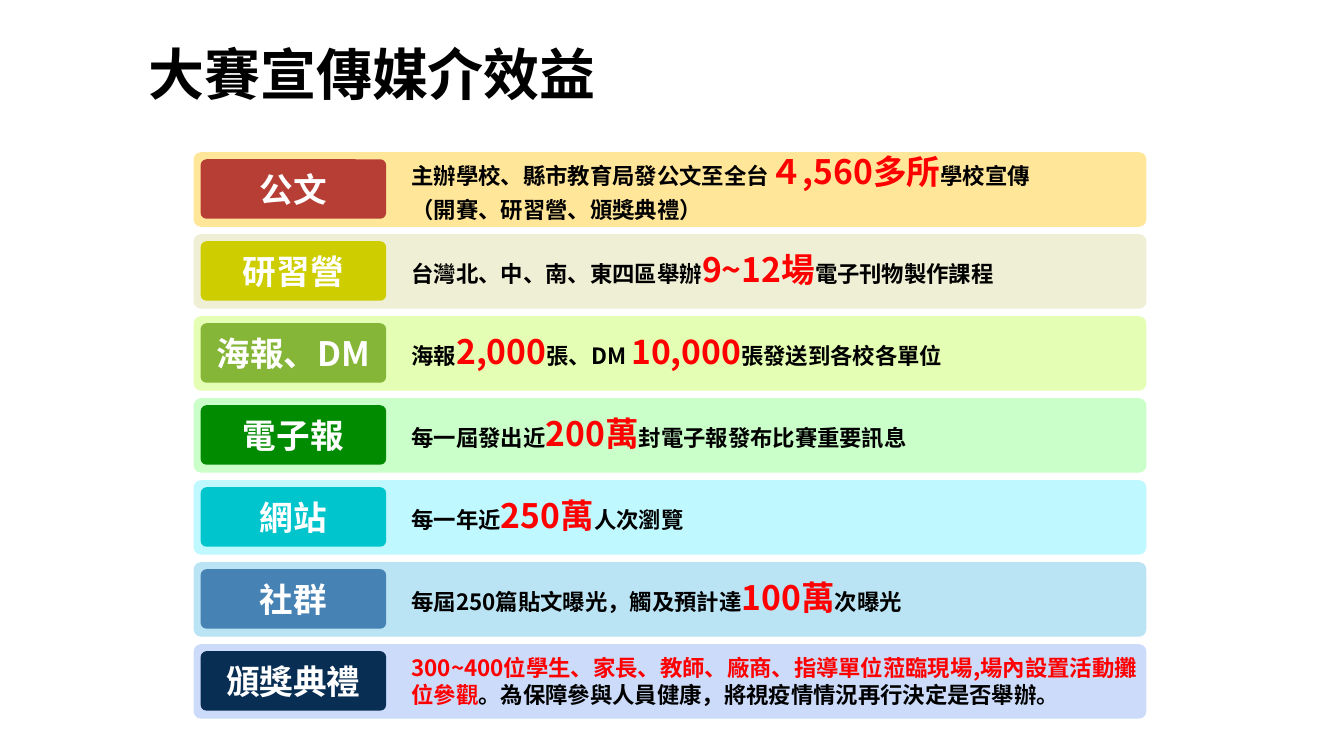
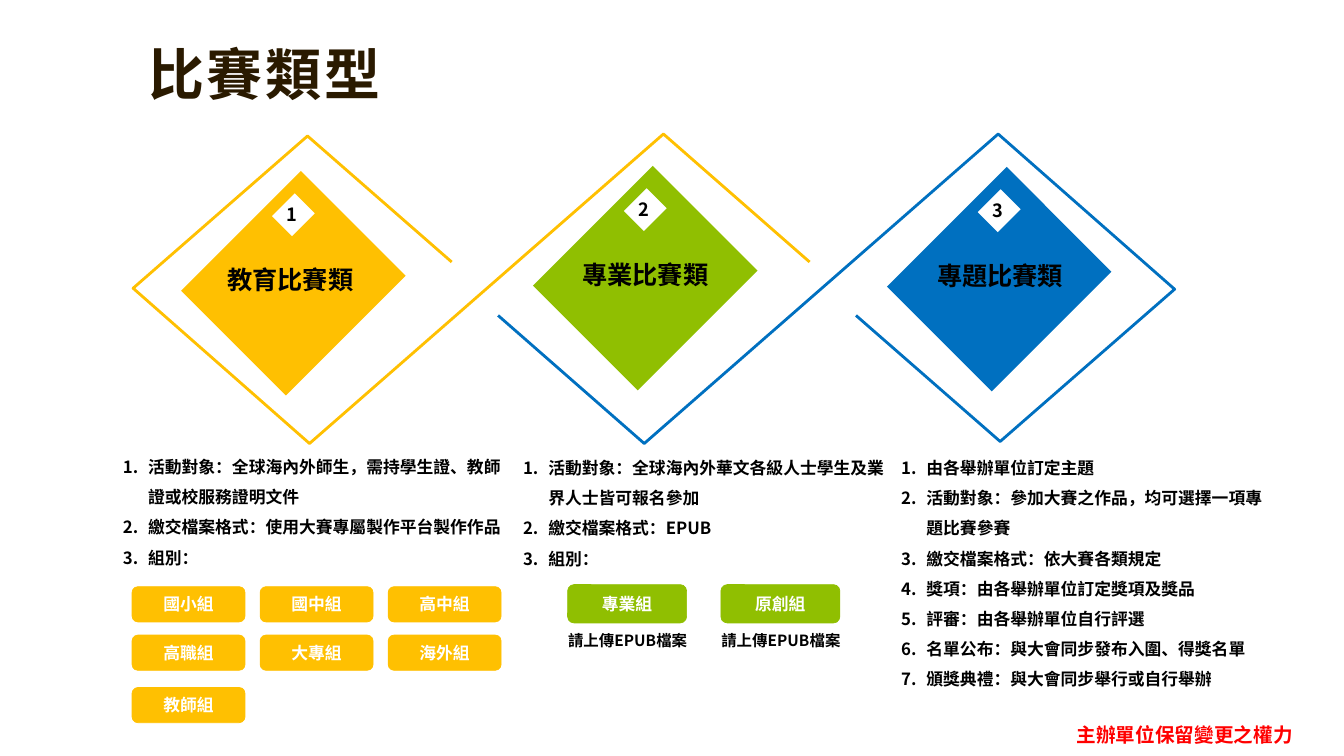
from lxml.etree import SubElement
from pptx import Presentation
from pptx.dml.color import RGBColor
from pptx.enum.shapes import MSO_SHAPE
from pptx.enum.text import MSO_ANCHOR, PP_ALIGN
from pptx.oxml.ns import qn
from pptx.util import Inches, Pt

FONT = "Noto Sans CJK SC"
BLACK, WHITE, RED = "000000", "FFFFFF", "FF0000"
GOLD, GREEN, BLUE = "FFC001", "90BF01", "0070C0"
MID, LEFT = PP_ALIGN.CENTER, PP_ALIGN.LEFT


def rgb(code):
    return RGBColor.from_string(code)


class Deck:
    """Holds the style and the current slide."""

    def __init__(self):
        self.prs = Presentation()
        self.prs.slide_width = Inches(13.33)
        self.prs.slide_height = Inches(7.5)
        self.slide = None

    def start(self, text, color=BLACK, track=0):
        """Add a slide with its title."""
        self.slide = self.prs.slides.add_slide(self.prs.slide_layouts[5])
        title = self.slide.shapes.title
        title.left, title.top = Inches(1.37), Inches(0.42)
        title.width, title.height = Inches(11.13), Inches(1.63)
        frame = title.text_frame
        frame.text = text
        frame.vertical_anchor = MSO_ANCHOR.TOP
        para = frame.paragraphs[0]
        para.alignment = LEFT
        para.line_spacing = 0.9
        self.style(para.runs[0], 40, color)
        if track:
            para.runs[0].font._element.set("spc", str(track * 100))

    def style(self, run, size, color, face=FONT):
        font = run.font
        font.name, font.size, font.bold = face, Pt(size), True
        font.color.rgb = rgb(color)
        east = SubElement(font._element, qn("a:ea"))
        east.set("typeface", FONT)

    def fill_in(self, para, text, size, color, align=MID, face=FONT):
        para.text = text
        para.alignment = align
        self.style(para.runs[0], size, color, face)

    def shape(self, kind, x, y, w, h, fill, edge=None, alpha=100):
        box = self.slide.shapes.add_shape(
            kind, Inches(x), Inches(y), Inches(w), Inches(h))
        box.shadow.inherit = False
        box.fill.solid()
        box.fill.fore_color.rgb = rgb(fill)
        if alpha < 100:
            tone = box._element.spPr.find(".//" + qn("a:srgbClr"))
            SubElement(tone, qn("a:alpha")).set("val", str(alpha * 1000))
        if edge:
            box.line.color.rgb = rgb(edge)
            box.line.width = Pt(0.5)
        else:
            box.line.fill.background()
        return box

    def tag(self, x, y, w, h, fill, text, size, edge=None, bend=None):
        """Rounded box with a centred white label."""
        box = self.shape(MSO_SHAPE.ROUNDED_RECTANGLE, x, y, w, h, fill, edge)
        if bend:
            box.adjustments[0] = bend
        box.text_frame.vertical_anchor = MSO_ANCHOR.MIDDLE
        self.fill_in(box.text_frame.paragraphs[0], text, size, WHITE)

    def band(self, y, fill, alpha, lines):
        """Wide row; each line is a list of (text, size, color)."""
        box = self.shape(MSO_SHAPE.ROUNDED_RECTANGLE, 1.92, y, 9.45, 0.74,
                         fill, alpha=alpha)
        box.adjustments[0] = 0.1
        frame = box.text_frame
        frame.vertical_anchor = MSO_ANCHOR.MIDDLE
        frame.margin_left = Inches(2.14)
        frame.margin_right = frame.margin_top = frame.margin_bottom = Inches(0.04)
        for i, parts in enumerate(lines):
            para = frame.add_paragraph() if i else frame.paragraphs[0]
            para.alignment = LEFT
            if any(size == 24 for _, size, _ in lines[0]):
                para.line_spacing = 0.9
                para.space_after = Pt(5.6)
            for text, size, color in parts:
                run = para.add_run()
                run.text = text
                self.style(run, size, color)

    def label(self, x, y, w, h, text, size, color=BLACK, align=MID,
              face=FONT, wrap=True, tight=False):
        box = self.slide.shapes.add_textbox(
            Inches(x), Inches(y), Inches(w), Inches(h))
        frame = box.text_frame
        frame.word_wrap = wrap
        if tight:
            frame.margin_left = frame.margin_right = 0
            frame.margin_top = frame.margin_bottom = 0
            frame.vertical_anchor = MSO_ANCHOR.MIDDLE
        self.fill_in(frame.paragraphs[0], text, size, color, align, face)

    def steps(self, x, y, w, h, items):
        """Numbered list."""
        box = self.slide.shapes.add_textbox(
            Inches(x), Inches(y), Inches(w), Inches(h))
        frame = box.text_frame
        frame.word_wrap = True
        for i, item in enumerate(items):
            para = frame.add_paragraph() if i else frame.paragraphs[0]
            props = para._p.get_or_add_pPr()
            props.set("marL", str(Inches(0.53)))
            props.set("indent", str(Inches(-0.25)))
            SubElement(props, qn("a:buFont")).set("typeface", FONT)
            SubElement(props, qn("a:buAutoNum")).set("type", "arabicPeriod")
            para.line_spacing = 1.5
            self.fill_in(para, item, 12, BLACK, LEFT)

    def trace(self, points, color):
        """Open outline through the points."""
        spots = [(Inches(x), Inches(y)) for x, y in points]
        pen = self.slide.shapes.build_freeform(*spots[0])
        pen.add_line_segments(spots[1:], close=False)
        line = pen.convert_to_shape()
        line.shadow.inherit = False
        line.fill.background()
        line.line.color.rgb = rgb(color)
        line.line.width = Pt(2)

    def gem(self, num, x, y, mid, fill, text):
        """Tilted square centred on x, y with a number and a name."""
        for w, h, up, tone in ((1.68, 1.47, 0, fill), (0.32, 0.28, 0.68, WHITE)):
            box = self.shape(MSO_SHAPE.RECTANGLE, x - w / 2, y - up - h / 2,
                             w, h, tone)
            box.rotation = 315
        self.label(mid - 0.97, y - 0.24, 1.94, 0.38, text, 18)
        self.label(x - 0.07, y - 0.79, 0.1, 0.21, str(num), 13,
                   wrap=False, tight=True)


def plain(text):
    return text, 16, BLACK


def big(text):
    return text, 24, RED


def media(deck):
    deck.start("大賽宣傳媒介效益")
    rows = [
        ("公文", "B73E35", "FFE48F", 90,
         [[plain("主辦學校、縣市教育局發公文至全台"), big("４,560多所"),
           plain("學校宣傳")], [plain("（開賽、研習營、頒獎典禮）")]]),
        ("研習營", "CDCD00", "EEEED1", 90,
         [[plain("台灣北、中、南、東四區舉辦"), big("9~12場"),
           plain("電子刊物製作課程")]]),
        ("海報、DM", "86B638", "E4FFB3", 100,
         [[plain("海報"), big("2,000"), plain("張、DM "), big("10,000"),
           plain("張發送到各校各單位")]]),
        ("電子報", "008B00", "C5FFC5", 90,
         [[plain("每一屆發出近"), big("200萬"),
           plain("封電子報發布比賽重要訊息")]]),
        ("網站", "00C5CD", "B9F8FF", 90,
         [[plain("每一年近"), big("250萬"), plain("人次瀏覽")]]),
        ("社群", "4682B4", "BAE3F4", 100,
         [[plain("每屆250篇貼文曝光，觸及預計達"), big("100萬"),
           plain("次曝光")]]),
        ("頒獎典禮", "082E54", "CBDBF9", 100,
         [[("300~400位學生、家長、教師、廠商、指導單位蒞臨現場,"
            "場內設置活動攤位參觀", 16, RED),
           plain("。為保障參與人員健康，將視疫情情況再行決定是否舉辦。")]]),
    ]
    step = (6.39 - 1.51) / (len(rows) - 1)
    for i, (name, dark, pale, alpha, lines) in enumerate(rows):
        top = 1.51 + i * step
        deck.band(top, pale, alpha, lines)
        deck.tag(1.99, top + 0.07, 1.84, 0.59, dark, name, 24, bend=0.1)


def types(deck):
    deck.start("比賽類型", "2A1A00", 2)

    # Interlocking outlines: the blue one is the gold one turned half round
    bends = [(8.03, 2.6), (6.58, 1.33), (3.07, 4.4),
             (1.32, 2.86), (3.05, 1.35), (4.48, 2.6)]
    deck.trace(bends, GOLD)
    deck.trace([(12.97 - x, 5.73 - y) for x, y in bends], BLUE)

    # Diamonds
    gems = [(2.91, 2.81, 2.88, GOLD, "教育比賽類"),
            (6.4, 2.76, 6.4, GREEN, "專業比賽類"),
            (9.91, 2.77, 9.92, BLUE, "專題比賽類")]
    for num, gem in enumerate(gems, 1):
        deck.gem(num, *gem)

    # Rules of each type
    deck.steps(0.84, 4.38, 4.28, 1.31, [
        "活動對象：全球海內外師生，需持學生證、教師證或校服務證明文件",
        "繳交檔案格式：使用大賽專屬製作平台製作作品",
        "組別："])
    deck.steps(4.81, 4.39, 4.06, 1.3, [
        "活動對象：全球海內外華文各級人士學生及業界人士皆可報名參加",
        "繳交檔案格式：EPUB",
        "組別："])
    deck.steps(8.56, 4.39, 4.09, 2.83, [
        "由各舉辦單位訂定主題",
        "活動對象：參加大賽之作品，均可選擇一項專題比賽參賽",
        "繳交檔案格式：依大賽各類規定",
        "獎項：由各舉辦單位訂定獎項及獎品",
        "評審：由各舉辦單位自行評選",
        "名單公布：與大會同步發布入圍、得獎名單",
        "頒獎典禮：與大會同步舉行或自行舉辦"])

    # Groups
    teams = ["國小組", "國中組", "高中組", "高職組", "大專組", "海外組", "教師組"]
    tops = (5.82, 6.3, 6.82)
    for i, team in enumerate(teams):
        row, col = divmod(i, 3)
        deck.tag(1.31 + 1.27 * col, tops[row], 1.12, 0.35, GOLD, team, 12, GOLD)
    for i, team in enumerate(["專業組", "原創組"]):
        x = 5.63 + 1.52 * i
        deck.tag(x, 5.8, 1.18, 0.38, GREEN, team, 12, GREEN)
        deck.label(x - 0.23, 6.21, 1.65, 0.3, "請上傳EPUB檔案", 11)

    # Closing note
    deck.label(10.58, 7.12, 2.36, 0.34, "主辦單位保留變更之權力", 14, RED,
               LEFT, "Calibri", wrap=False)


def main():
    deck = Deck()
    media(deck)
    types(deck)
    deck.prs.save("out.pptx")


if __name__ == "__main__":
    main()
